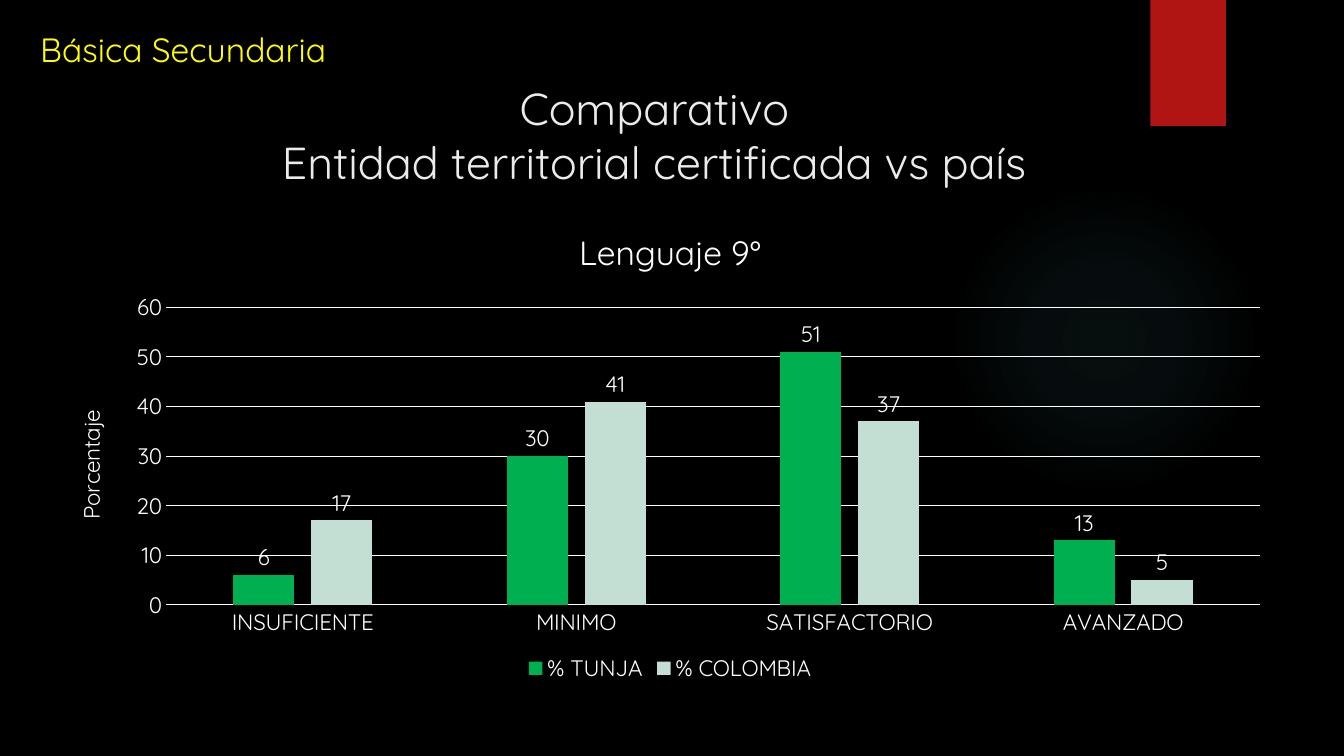
import pptx
import pptx.chart.data
import pptx.dml.color
import pptx.enum.chart
import pptx.enum.shapes
import pptx.enum.text
import pptx.oxml
import pptx.util
from pptx.util import Inches

FONT = "Quicksand"
WHITE = "FFFFFF"
NS = ('xmlns:a="http://schemas.openxmlformats.org/drawingml/2006/main" '
      'xmlns:c="http://schemas.openxmlformats.org/drawingml/2006/chart"')
LEVELS = ["INSUFICIENTE", "MINIMO", "SATISFACTORIO", "AVANZADO"]
SERIES = [("% TUNJA", (6, 30, 51, 13), "00B050"),
          ("% COLOMBIA", (17, 41, 37, 5), "C3DED3")]


def rgb(color):
    return pptx.dml.color.RGBColor.from_string(color)


def paint(fill, color):
    fill.solid()
    fill.fore_color.rgb = rgb(color)


def style_font(font, size, color=WHITE):
    font.name = FONT
    font.size = pptx.util.Pt(size)
    font.bold = False
    font.color.rgb = rgb(color)


def style_line(line):
    line.width = pptx.util.Pt(0.75)
    line.color.rgb = rgb(WHITE)


def add_plain_shape(s, kind, left, top, width, height, color):
    sp = s.shapes.add_shape(kind, Inches(left), Inches(top),
                            Inches(width), Inches(height))
    sp.shadow.inherit = False
    sp.line.fill.background()
    paint(sp.fill, color)
    return sp


def add_glow(s):
    color = "50B9C1"
    sp = add_plain_shape(s, pptx.enum.shapes.MSO_SHAPE.OVAL,
                         9.41, 1.83, 3.08, 3.08, color)
    stops = "".join(
        f'<a:gs pos="{pos * 1000}"><a:srgbClr val="{color}">'
        f'<a:alpha val="{alpha * 1000}"/></a:srgbClr></a:gs>'
        for pos, alpha in ((0, 7), (36, 6), (69, 0)))
    gradient = pptx.oxml.parse_xml(
        f'<a:gradFill {NS} rotWithShape="1"><a:gsLst>{stops}</a:gsLst>'
        '<a:path path="circle"><a:fillToRect l="50000" t="50000" '
        'r="50000" b="50000"/></a:path></a:gradFill>')
    solid = sp._element.spPr.find(pptx.oxml.ns.qn("a:solidFill"))
    solid.getparent().replace(solid, gradient)


def add_title(s, text):
    sp = s.shapes.title
    sp.left, sp.top = Inches(1.92), Inches(0.75)
    sp.width, sp.height = Inches(9.14), Inches(1.53)
    tf = sp.text_frame
    tf.vertical_anchor = pptx.enum.text.MSO_ANCHOR.TOP
    tf.text = text
    p = tf.paragraphs[0]
    p.alignment = pptx.enum.text.PP_ALIGN.CENTER
    style_font(p.font, 32, "EBEBEB")


def add_label(s, text):
    tf = s.shapes.add_textbox(Inches(0.3), Inches(0.24),
                              Inches(3.23), Inches(0.5)).text_frame
    tf.word_wrap = True
    tf.text = text
    style_font(tf.paragraphs[0].font, 24, "FFFF00")


def set_chart_text(owner, text, size):
    tf = owner.text_frame
    tf.text = text
    style_font(tf.paragraphs[0].font, size)


def set_plot_area(chart, x, y, w, h):
    plot_area = chart._chartSpace.chart.plotArea
    for old in plot_area.findall(pptx.oxml.ns.qn("c:layout")):
        plot_area.remove(old)
    sizes = "".join(f'<c:{tag} val="{val}"/>'
                    for tag, val in zip("xywh", (x, y, w, h)))
    plot_area.insert(0, pptx.oxml.parse_xml(
        f'<c:layout {NS}><c:manualLayout><c:layoutTarget val="inner"/>'
        '<c:xMode val="edge"/><c:yMode val="edge"/>'
        f'{sizes}</c:manualLayout></c:layout>'))


def style_axes(chart):
    none = pptx.enum.chart.XL_TICK_MARK.NONE
    for axis in (chart.category_axis, chart.value_axis):
        axis.major_tick_mark = axis.minor_tick_mark = none
        style_font(axis.tick_labels.font, 16)
    style_line(chart.category_axis.format.line)
    values = chart.value_axis
    values.minimum_scale, values.maximum_scale, values.major_unit = 0, 60, 10
    values.format.line.fill.background()
    style_line(values.major_gridlines.format.line)
    set_chart_text(values.axis_title, "Porcentaje", 16)


def add_column_chart(s):
    data = pptx.chart.data.CategoryChartData()
    data.categories = LEVELS
    for name, values, _ in SERIES:
        data.add_series(name, values)
    chart = s.shapes.add_chart(
        pptx.enum.chart.XL_CHART_TYPE.COLUMN_CLUSTERED, Inches(0.55),
        Inches(2.05), Inches(12.19), Inches(4.76), data).chart
    style_font(chart.font, 10)
    set_chart_text(chart.chart_title, "Lenguaje 9°", 24)
    chart.chart_title.include_in_layout = False
    set_plot_area(chart, 0.09, 0.21, 0.89, 0.62)
    style_axes(chart)

    # Legend
    chart.has_legend = True
    chart.legend.position = pptx.enum.chart.XL_LEGEND_POSITION.BOTTOM
    chart.legend.include_in_layout = False
    style_font(chart.legend.font, 16)

    # Columns and their values
    plot = chart.plots[0]
    plot.gap_width, plot.overlap = 219, -27
    plot.vary_by_categories = False
    for series, (_, _, color) in zip(plot.series, SERIES):
        paint(series.format.fill, color)
        labels = series.data_labels
        labels.show_value = True
        labels.position = pptx.enum.chart.XL_LABEL_POSITION.OUTSIDE_END
        style_font(labels.font, 16)


def main():
    prs = pptx.Presentation()
    prs.slide_width, prs.slide_height = Inches(13.33), Inches(7.5)
    s = prs.slides.add_slide(prs.slide_layouts[5])
    paint(s.background.fill, "000000")

    # Decoration
    add_glow(s)
    add_plain_shape(s, pptx.enum.shapes.MSO_SHAPE.RECTANGLE,
                    11.41, 0, 0.75, 1.25, "B01513")

    # Content
    add_title(s, "Comparativo\vEntidad territorial certificada vs país")
    add_column_chart(s)
    add_label(s, "Básica Secundaria")
    prs.save("out.pptx")


if __name__ == "__main__":
    main()
